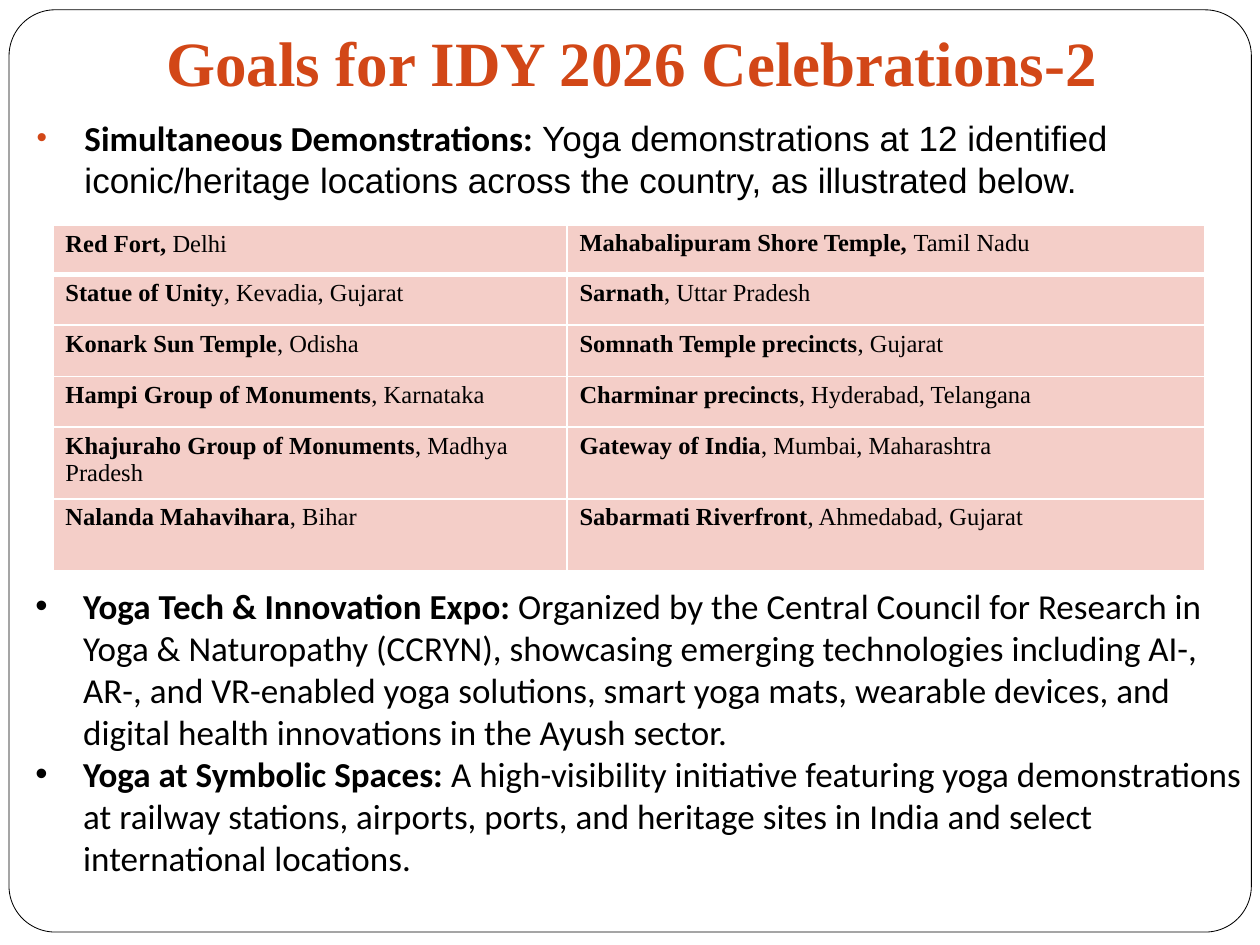
"""Build the slide on goals for the IDY 2026 celebrations."""
from dataclasses import dataclass
from typing import Any

from lxml.etree import SubElement
from pptx import Presentation
from pptx.dml.color import RGBColor
from pptx.enum.shapes import MSO_SHAPE
from pptx.oxml.ns import qn
from pptx.util import Pt

BLACK = RGBColor(0x00, 0x00, 0x00)
WHITE = RGBColor(0xFF, 0xFF, 0xFF)
ORANGE = RGBColor(0xD2, 0x47, 0x17)
PINK = RGBColor(0xF4, 0xCE, 0xC8)

SITES = [
    ([("Red Fort, ", "Delhi")], [("Mahabalipuram Shore Temple, ", "Tamil Nadu")]),
    ([("Statue of Unity", ", Kevadia, Gujarat")], [("Sarnath", ", Uttar Pradesh")]),
    ([("Konark Sun Temple", ", Odisha")], [("Somnath Temple precincts", ", Gujarat")]),
    ([("Hampi Group of Monuments", ", Karnataka")],
     [("Charminar precincts", ", Hyderabad, Telangana")]),
    ([("Khajuraho Group of Monuments", ", Madhya"), ("", "Pradesh")],
     [("Gateway of India", ", Mumbai, Maharashtra")]),
    ([("Nalanda Mahavihara", ", Bihar")],
     [("Sabarmati Riverfront", ", Ahmedabad, Gujarat")]),
]
COLUMN_WIDTHS = [293.76, 364.32]
ROW_HEIGHTS = [28.1, 28.8, 29.5, 28.8, 41, 41]

DEMONSTRATIONS = [(
    "Simultaneous Demonstrations:",
    " Yoga demonstrations at 12 identified iconic/heritage locations across the country, "
    "as illustrated below.")]
INITIATIVES = [
    ("Yoga Tech & Innovation Expo:",
     " Organized by the Central Council for Research in Yoga & Naturopathy (CCRYN), "
     "showcasing emerging technologies including AI-, AR-, and VR-enabled yoga solutions, "
     "smart yoga mats, wearable devices, and digital health innovations in the Ayush sector."),
    ("Yoga at Symbolic Spaces:",
     " A high-visibility initiative featuring yoga demonstrations at railway stations, "
     "airports, ports, and heritage sites in India and select international locations."),
]


@dataclass
class SlideBuilder:
    page: Any
    heading_font: str = "Times New Roman"
    body_font: str = "Calibri"

    def frame(self, left, top, width, height):
        shape = self.page.shapes.add_shape(
            MSO_SHAPE.ROUNDED_RECTANGLE, Pt(left), Pt(top), Pt(width), Pt(height))
        shape.adjustments[0] = 0.05
        shape.shadow.inherit = False
        shape.fill.background()
        shape.line.color.rgb = BLACK
        shape.line.width = Pt(0.48)

    def box(self, left, top, width, height, inset):
        text_frame = self.page.shapes.add_textbox(
            Pt(left), Pt(top), Pt(width), Pt(height)).text_frame
        text_frame.word_wrap = True
        text_frame.margin_left = text_frame.margin_right = text_frame.margin_bottom = 0
        text_frame.margin_top = Pt(inset)
        return text_frame

    def span(self, para, text, font, size, color=BLACK, bold=False):
        if text:
            span = para.add_run()
            span.text = text
            span.font.name = font
            span.font.size = Pt(size)
            span.font.bold = bold
            span.font.color.rgb = color

    def paragraphs(self, text_frame, entries, lead_font, font, size):
        for index, (lead, detail) in enumerate(entries):
            para = text_frame.add_paragraph() if index else text_frame.paragraphs[0]
            self.span(para, lead, lead_font, size, bold=True)
            self.span(para, detail, font, size)

    def title(self, text, left, top, width, height):
        para = self.box(left, top, width, height, 1).paragraphs[0]
        self.span(para, text, self.heading_font, 36, ORANGE, True)

    def bullets(self, entries, left, top, width, height, inset, font, indent,
                color=BLACK, percent=100):
        text_frame = self.box(left, top, width, height, inset)
        self.paragraphs(text_frame, entries, self.body_font, font, 20)
        for para in text_frame.paragraphs:
            properties = para._p.get_or_add_pPr()
            properties.set("marL", str(Pt(indent)))
            properties.set("indent", str(-Pt(27.36)))
            bullet_color = SubElement(properties, qn("a:buClr"))
            SubElement(bullet_color, qn("a:srgbClr"), val=str(color))
            SubElement(properties, qn("a:buSzPct"), val=str(percent * 1000))
            SubElement(properties, qn("a:buFont"), typeface="Arial")
            SubElement(properties, qn("a:buChar"), char="•")

    def borders(self, cell, top, bottom):
        properties = cell._tc.get_or_add_tcPr()
        for side, width in (("L", 1), ("R", 1), ("T", top), ("B", bottom)):
            line = SubElement(properties, qn(f"a:ln{side}"), w=str(Pt(width)))
            fill = SubElement(line, qn("a:solidFill"))
            SubElement(fill, qn("a:srgbClr"), val=str(WHITE))

    def table(self, rows, left, top):
        table = self.page.shapes.add_table(
            len(rows), len(COLUMN_WIDTHS), Pt(left), Pt(top),
            Pt(sum(COLUMN_WIDTHS)), Pt(sum(ROW_HEIGHTS))).table
        table.first_row = table.horz_banding = False
        for column, width in zip(table.columns, COLUMN_WIDTHS):
            column.width = Pt(width)
        for row, height in zip(table.rows, ROW_HEIGHTS):
            row.height = Pt(height)
        for row_index, row in enumerate(rows):
            for column_index, entries in enumerate(row):
                cell = table.cell(row_index, column_index)
                cell.margin_left = Pt(7.2)
                cell.margin_right = cell.margin_bottom = 0
                cell.margin_top = Pt(2.2 if (row_index, column_index) == (0, 1) else 3)
                self.borders(cell, 3 if row_index == 1 else 1, 3 if row_index == 0 else 1)
                cell.fill.solid()
                cell.fill.fore_color.rgb = PINK
                self.paragraphs(
                    cell.text_frame, entries, self.heading_font, self.heading_font, 14)


def main():
    deck = Presentation()
    deck.slide_width, deck.slide_height = Pt(720), Pt(540)
    builder = SlideBuilder(deck.slides.add_slide(deck.slide_layouts[6]))
    builder.frame(5.2, 5.6, 709.9, 527)
    builder.title("Goals for IDY 2026 Celebrations-2", 95, 12.2, 540, 45.4)
    builder.bullets(DEMONSTRATIONS, 20.2, 65.5, 667.4, 49.7, 1, "Arial", 28.1, ORANGE, 85)
    builder.table(SITES, 30.2, 128.9)
    builder.bullets(INITIATIVES, 20.2, 321.1, 691.2, 206.6, 13, "Calibri", 27.36)
    deck.save("out.pptx")


if __name__ == "__main__":
    main()
